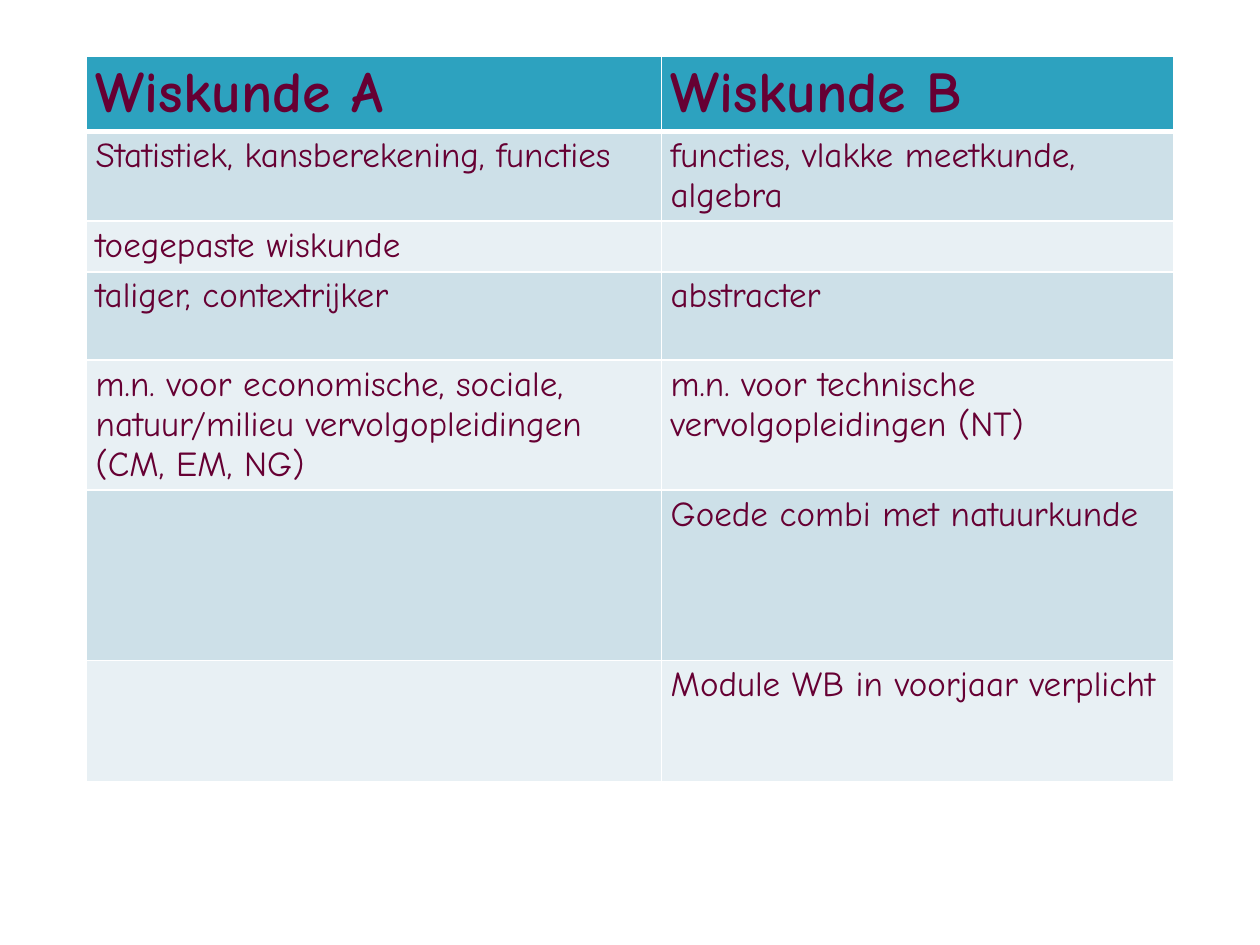
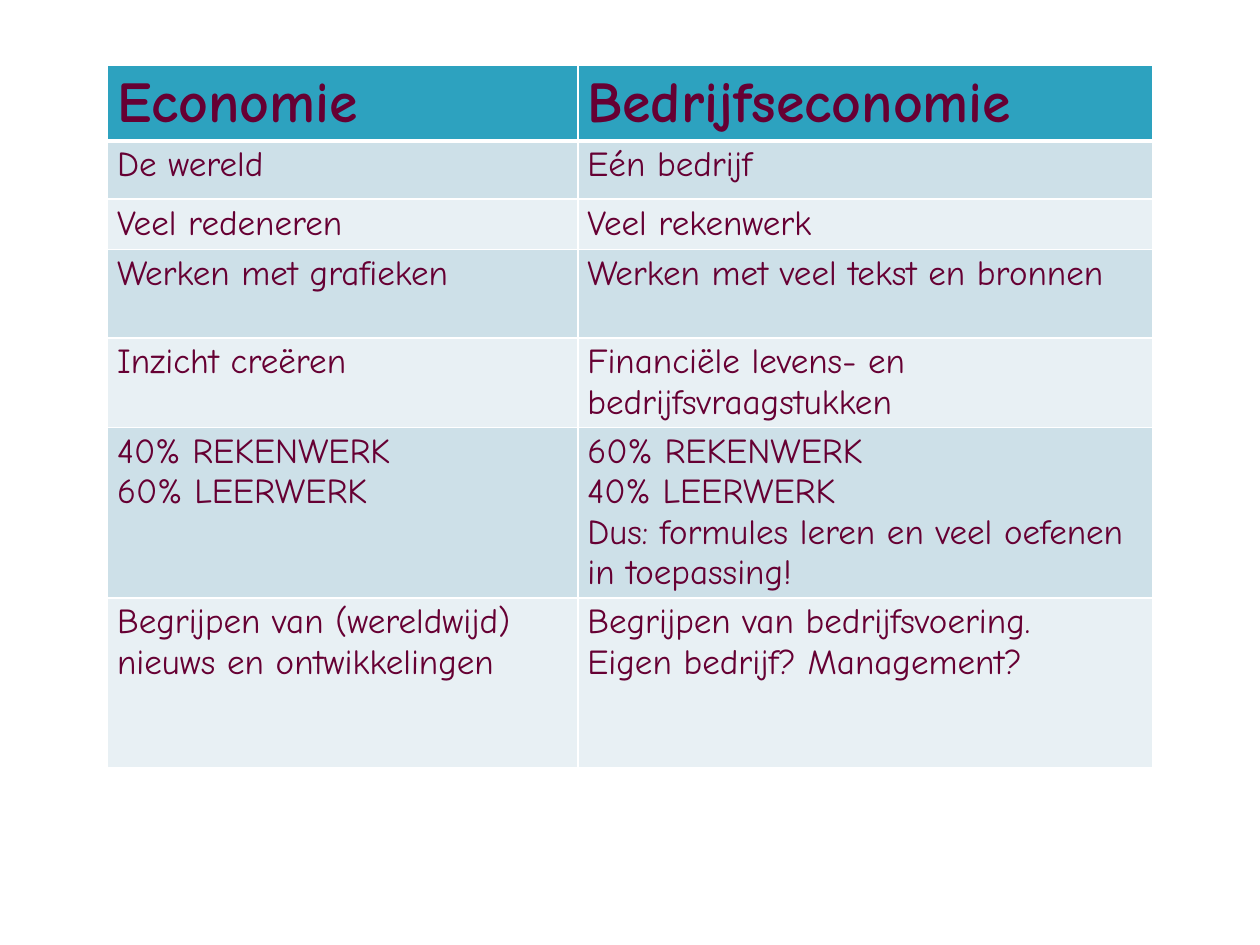
"""Build two slides that compare school subjects side by side."""
from lxml import etree
from pptx import Presentation
from pptx import util as u
from pptx.dml.color import RGBColor
from pptx.oxml import ns

FONT = "Comic Neue"
PLUM = RGBColor(0x66, 0x00, 0x33)
TEAL = RGBColor(0x2D, 0xA2, 0xBF)
BAND_DARK = RGBColor(0xCD, 0xE0, 0xE8)
BAND_LIGHT = RGBColor(0xE8, 0xF0, 0xF4)
WHITE = RGBColor(0xFF, 0xFF, 0xFF)

HEADER_SIZE, BODY_SIZE = 33, 20
THIN, THICK = 1, 3
ROW_HEIGHTS = [1.4, 1.17, 1.02, 1.78, 1.78, 3.43]

MATHS = [
    ("Wiskunde A", "Wiskunde B"),
    ("Statistiek, kansberekening, functies", "functies, vlakke meetkunde, algebra"),
    ("toegepaste wiskunde", ""),
    ("taliger, contextrijker", "abstracter"),
    ("m.n. voor economische, sociale, natuur/milieu vervolgopleidingen (CM, EM, NG)",
     "m.n. voor technische vervolgopleidingen (NT)"),
    ("", "Goede combi met natuurkunde"),
    ("", "Module WB in voorjaar verplicht"),
]
ECONOMICS = [
    ("Economie", "Bedrijfseconomie"),
    ("De wereld", "Eén bedrijf"),
    ("Veel redeneren", "Veel rekenwerk"),
    ("Werken met grafieken", "Werken met veel tekst en bronnen"),
    ("Inzicht creëren", "Financiële levens- en bedrijfsvraagstukken"),
    ("40% REKENWERK\n60% LEERWERK",
     "60% REKENWERK\n40% LEERWERK\nDus: formules leren en veel oefenen in toepassing!"),
    ("Begrijpen van (wereldwijd) nieuws en ontwikkelingen",
     "Begrijpen van bedrijfsvoering.\nEigen bedrijf? Management?"),
]


def set_borders(cell, top, bottom):
    properties = cell._tc.get_or_add_tcPr()
    for side, width in (("L", THIN), ("R", THIN), ("T", top), ("B", bottom)):
        line = etree.SubElement(properties, ns.qn(f"a:ln{side}"), w=str(u.Pt(width)))
        fill = etree.SubElement(line, ns.qn("a:solidFill"))
        etree.SubElement(fill, ns.qn("a:srgbClr"), val=str(WHITE))


def fill_cell(cell, content, row_index):
    is_header = row_index == 0
    set_borders(cell, THICK if row_index == 1 else THIN, THICK if is_header else THIN)
    cell.fill.solid()
    cell.fill.fore_color.rgb = TEAL if is_header else (BAND_LIGHT, BAND_DARK)[row_index % 2]
    cell.margin_left = cell.margin_right = u.Cm(0.19)
    cell.margin_top = cell.margin_bottom = u.Cm(0.09)
    cell.text_frame.text = content
    for para in cell.text_frame.paragraphs:
        for span in para.runs:
            span.font.name = FONT
            span.font.size = u.Pt(HEADER_SIZE if is_header else BODY_SIZE)
            span.font.bold = is_header
            span.font.color.rgb = PLUM


def add_comparison(deck, subjects, left, top, column_widths, last_height):
    slide = deck.slides.add_slide(deck.slide_layouts[6])
    heights = ROW_HEIGHTS + [last_height]
    frame = slide.shapes.add_table(
        len(subjects), len(column_widths), u.Cm(left), u.Cm(top),
        u.Cm(sum(column_widths)), u.Cm(sum(heights)))
    table = frame.table
    table.first_row = table.horz_banding = False
    for column, width in zip(table.columns, column_widths):
        column.width = u.Cm(width)
    for row_index, (row, height) in enumerate(zip(table.rows, heights)):
        row.height = u.Cm(height)
        for cell, content in zip(row.cells, subjects[row_index]):
            fill_cell(cell, content, row_index)


def main():
    deck = Presentation()
    deck.slide_width, deck.slide_height = u.Cm(25.4), u.Cm(19.05)
    add_comparison(deck, MATHS, 1.74, 1.13, (11.59, 10.34), 2.44)
    add_comparison(deck, ECONOMICS, 2.17, 1.32, (9.48, 11.59), 3.43)
    deck.save("out.pptx")


if __name__ == "__main__":
    main()
